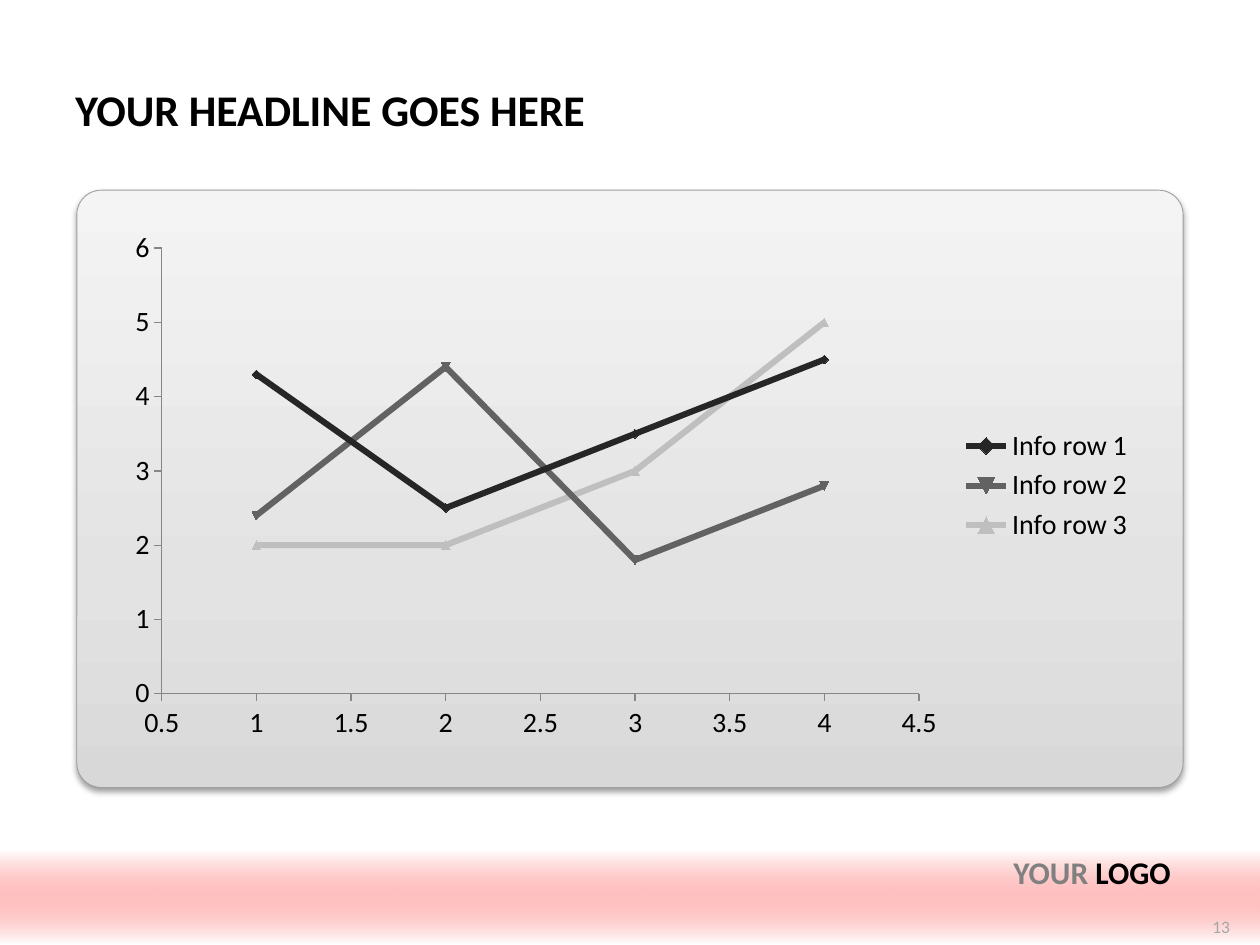
import lxml.etree
import pptx
import pptx.chart.data
import pptx.dml.color
import pptx.enum.chart
import pptx.enum.shapes
import pptx.enum.text
import pptx.oxml
import pptx.oxml.ns
import pptx.util
from dataclasses import dataclass

Inches = pptx.util.Inches
Pt = pptx.util.Pt
ALIGN = pptx.enum.text.PP_ALIGN
ANCHOR = pptx.enum.text.MSO_ANCHOR
SHAPE = pptx.enum.shapes.MSO_SHAPE


@dataclass(frozen=True)
class Theme:
    font: str = "Calibri"
    ink: str = "000000"
    logo_gray: str = "808080"
    number_gray: str = "A6A6A6"
    panel_line: str = "A1A1A1"
    axis_line: str = "868686"
    # Gradient stops: position, colour, opacity (all in percent)
    panel_stops: tuple = ((0, "D8D8D8", 100), (35, "E3E3E3", 100), (100, "F4F4F4", 100))
    band_stops: tuple = ((0, "FF0000", 0), (100, "FFFFFF", 100))
    series: tuple = ("262626", "626262", "BFBFBF")
    title_size: int = 25
    logo_size: int = 18
    chart_size: int = 16
    number_size: int = 10


def rgb(code):
    return pptx.dml.color.RGBColor.from_string(code)


class SlideBuilder:
    def __init__(self, page, theme):
        self.page = page
        self.theme = theme

    def style_font(self, font, size, color, bold=False):
        font.name = self.theme.font
        font.size = Pt(size)
        font.bold = bold
        font.color.rgb = rgb(color)

    def gradient_shape(self, kind, at, stops, angle):
        shape = self.page.shapes.add_shape(kind, *map(Inches, at))
        shape.shadow.inherit = False
        shape.line.fill.background()
        stop_xml = "".join(
            f'<a:gs pos="{pos * 1000}"><a:srgbClr val="{color}">'
            f'<a:alpha val="{opacity * 1000}"/></a:srgbClr></a:gs>'
            for pos, color, opacity in stops)
        fill = pptx.oxml.parse_xml(
            f'<a:gradFill {pptx.oxml.ns.nsdecls("a")} rotWithShape="1">'
            f'<a:gsLst>{stop_xml}</a:gsLst>'
            f'<a:lin ang="{angle * 60000}" scaled="0"/></a:gradFill>')
        geometry = shape.element.spPr.find(pptx.oxml.ns.qn("a:prstGeom"))
        geometry.addnext(fill)
        return shape

    def panel(self, at):
        shape = self.gradient_shape(SHAPE.ROUNDED_RECTANGLE, at, self.theme.panel_stops, 270)
        shape.adjustments[0] = 0.041
        shape.line.color.rgb = rgb(self.theme.panel_line)
        shape.line.width = Pt(0.5)
        effects = shape.element.spPr.find(pptx.oxml.ns.qn("a:effectLst"))
        shadow = lxml.etree.SubElement(
            effects, pptx.oxml.ns.qn("a:outerShdw"), blurRad=str(Pt(3.5)),
            dist=str(Pt(2)), dir="5400000", rotWithShape="0")
        color = lxml.etree.SubElement(shadow, pptx.oxml.ns.qn("a:srgbClr"), val=self.theme.ink)
        lxml.etree.SubElement(color, pptx.oxml.ns.qn("a:alpha"), val="38000")

    def band(self, at):
        self.gradient_shape(SHAPE.RECTANGLE, at, self.theme.band_stops, 90)

    def text(self, at, spans, size, bold=False, align=ALIGN.LEFT, anchor=ANCHOR.MIDDLE):
        box = self.page.shapes.add_textbox(*map(Inches, at))
        frame = box.text_frame
        frame.word_wrap = True
        frame.vertical_anchor = anchor
        para = frame.paragraphs[0]
        para.alignment = align
        for words, color in spans:
            span = para.add_run()
            span.text = words
            self.style_font(span.font, size, color, bold)

    def axis(self, axis, low, high, step):
        axis.minimum_scale, axis.maximum_scale = low, high
        axis.major_unit = step
        axis.has_major_gridlines = False
        axis.major_tick_mark = pptx.enum.chart.XL_TICK_MARK.OUTSIDE
        axis.format.line.color.rgb = rgb(self.theme.axis_line)
        axis.format.line.width = Pt(0.75)
        self.style_font(axis.tick_labels.font, self.theme.chart_size, self.theme.ink)

    def scatter(self, at, rows):
        data = pptx.chart.data.XyChartData()
        for name, values in rows.items():
            series = data.add_series(name)
            for x, y in enumerate(values, start=1):
                series.add_data_point(x, y)
        chart = self.page.shapes.add_chart(
            pptx.enum.chart.XL_CHART_TYPE.XY_SCATTER_LINES, *map(Inches, at), data).chart
        chart.has_title = False
        self.style_font(chart.font, self.theme.chart_size, self.theme.ink)
        self.axis(chart.category_axis, 0.5, 4.5, 0.5)
        self.axis(chart.value_axis, 0, 6, 1)
        chart.has_legend = True
        chart.legend.position = pptx.enum.chart.XL_LEGEND_POSITION.RIGHT
        chart.legend.include_in_layout = False
        self.style_font(chart.legend.font, self.theme.chart_size, self.theme.ink)
        chart.plots[0].vary_by_categories = False
        for series, color in zip(chart.plots[0].series, self.theme.series):
            series.smooth = False
            series.format.line.color.rgb = rgb(color)
            series.format.line.width = Pt(3.5)


def main():
    deck = pptx.Presentation()
    deck.slide_width, deck.slide_height = Inches(10), Inches(7.5)
    theme = Theme()
    slide = SlideBuilder(deck.slides.add_slide(deck.slide_layouts[6]), theme)

    # Background panel and footer band
    slide.panel((0.61, 1.51, 8.78, 4.74))
    slide.band((0, 6.75, 10, 0.75))

    # Headline
    slide.text((0.5, 0.59, 9, 0.55), [("YOUR HEADLINE GOES HERE", theme.ink)],
               theme.title_size, bold=True)

    # Line chart
    slide.scatter((0.91, 1.75, 8.19, 4.21), {
        "Info row 1": (4.3, 2.5, 3.5, 4.5),
        "Info row 2": (2.4, 4.4, 1.8, 2.8),
        "Info row 3": (2, 2, 3, 5),
    })

    # Footer: page number and logo text
    slide.text((9.39, 7.2, 0.47, 0.3), [("13", theme.number_gray)],
               theme.number_size, align=ALIGN.RIGHT)
    slide.text((0.5, 6.72, 8.89, 0.55), [("YOUR ", theme.logo_gray), ("LOGO", theme.ink)],
               theme.logo_size, bold=True, align=ALIGN.RIGHT, anchor=ANCHOR.TOP)

    deck.save("out.pptx")


if __name__ == "__main__":
    main()
